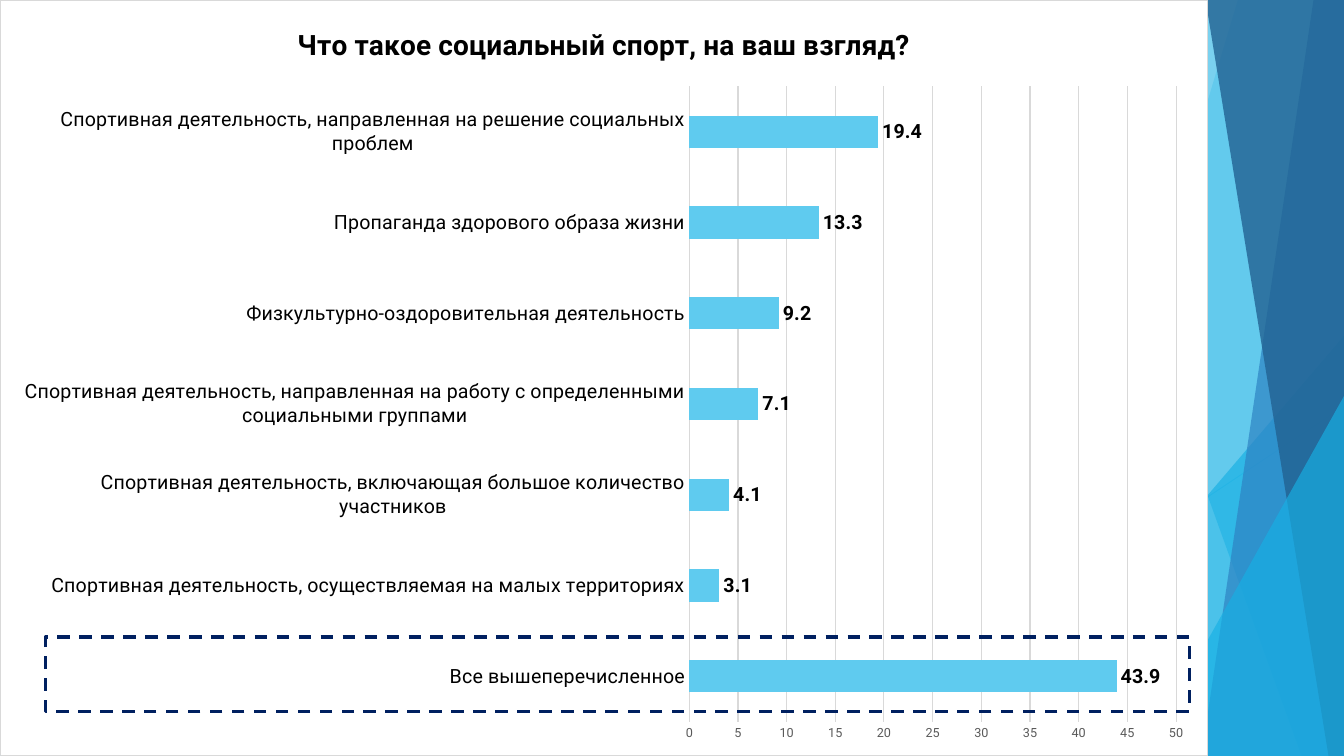
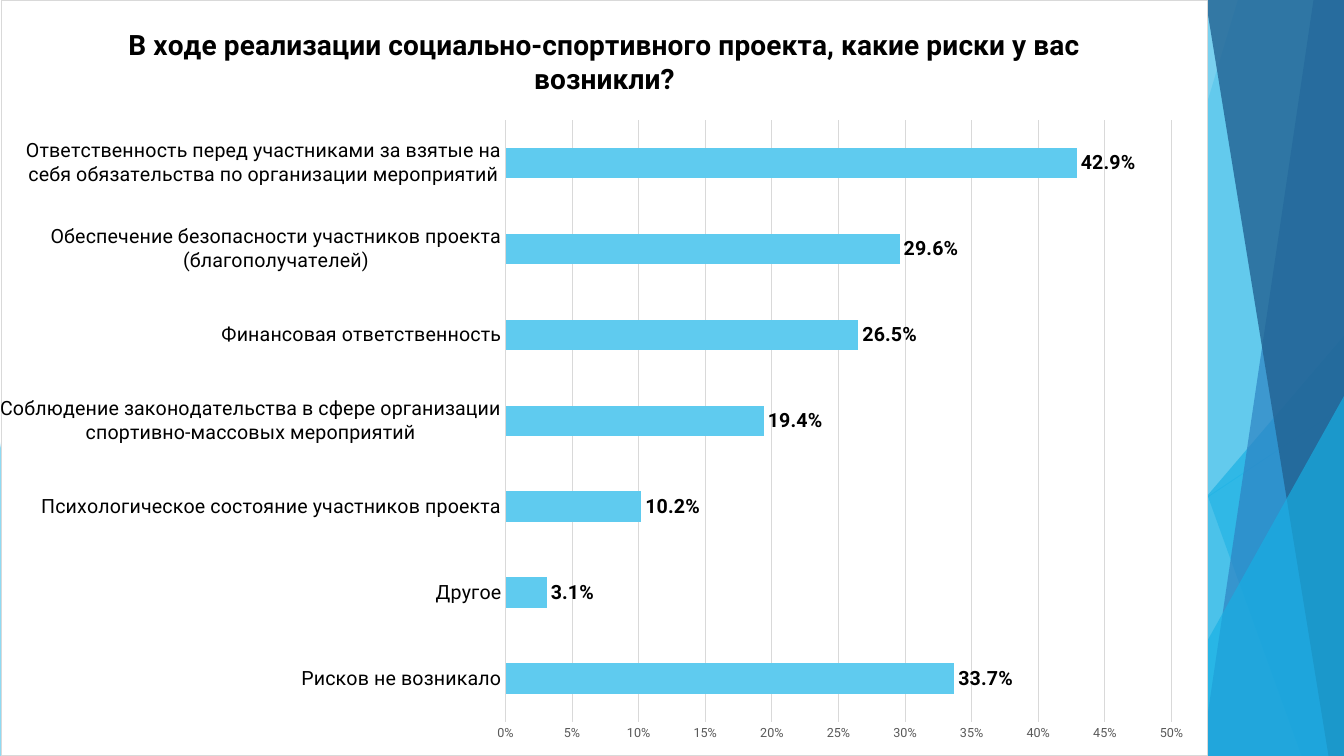
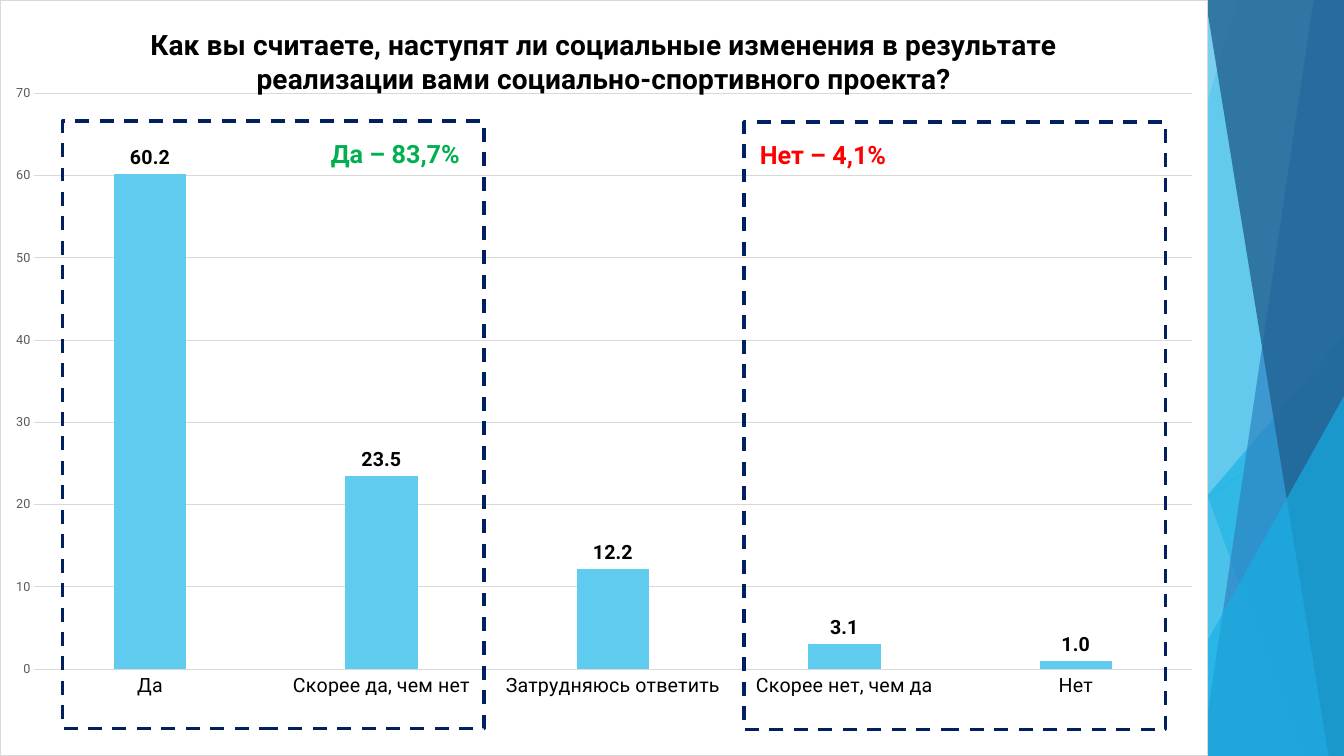
from lxml import etree
from pptx import Presentation
from pptx import util as u
from pptx.chart import data
from pptx.dml import color
from pptx.enum import chart as charts, dml, shapes, text
from pptx.oxml import ns, parse_xml

BLACK, GREY, RULE, WHITE = "000000", "595959", "D9D9D9", "FFFFFF"
SKY, CYAN, BLUE, DEEP, NAVY = "5FCBEF", "17B0E4", "2E83C3", "226292", "002060"
GREEN, RED = "00B050", "FF0000"
BAR = charts.XL_CHART_TYPE.BAR_CLUSTERED
COLUMN = charts.XL_CHART_TYPE.COLUMN_CLUSTERED


def rgb(value):
    return color.RGBColor.from_string(value)


def style_font(font, size, ink=BLACK, bold=False):
    font.name = "Roboto"
    font.size = u.Pt(size)
    font.bold = bold
    font.color.rgb = rgb(ink)


def write(frame, wording, align=text.PP_ALIGN.LEFT, **font_format):
    paragraph = frame.paragraphs[0]
    paragraph.alignment = align
    run = paragraph.add_run()
    run.text = wording
    style_font(run.font, **font_format)


def style_line(line, ink, width):
    line.color.rgb = rgb(ink)
    line.width = u.Pt(width)


def set_opacity(shape, percent):
    for node in shape.element.iter(ns.qn("a:srgbClr")):
        etree.SubElement(node, ns.qn("a:alpha"), val=str(percent * 1000))


class Deck:
    def __init__(self):
        self.presentation = Presentation()
        self.presentation.slide_width = u.Inches(13.33)
        self.presentation.slide_height = u.Inches(7.5)
        self.slide = None

    def add_slide(self):
        self.slide = self.presentation.slides.add_slide(self.presentation.slide_layouts[6])

    def x(self, percent):
        return u.Emu(round(self.presentation.slide_width * percent / 100))

    def y(self, percent):
        return u.Emu(round(self.presentation.slide_height * percent / 100))

    def box(self, left, top, width, height):
        return self.x(left), self.y(top), self.x(width), self.y(height)

    def paint(self, shape, fill, opacity):
        shape.shadow.inherit = False
        shape.fill.solid()
        shape.fill.fore_color.rgb = rgb(fill)
        shape.line.fill.background()
        set_opacity(shape, opacity)

    def ray(self, group, start, end):
        connector = group.shapes.add_connector(
            shapes.MSO_CONNECTOR.STRAIGHT,
            self.x(start[0]), self.y(start[1]), self.x(end[0]), self.y(end[1]))
        style_line(connector.line, SKY, 0.75)
        set_opacity(connector, 70)
        etree.SubElement(connector.element.spPr, ns.qn("a:effectLst"))

    def facet(self, group, top_left, bottom_left, fill, opacity):
        builder = group.shapes.build_freeform(self.x(top_left), 0)
        builder.add_line_segments([
            (self.x(100), 0), (self.x(100), self.y(100)),
            (self.x(bottom_left), self.y(100))], close=True)
        self.paint(builder.convert_to_shape(), fill, opacity)

    def triangle(self, group, left, top, width, apex, fill, opacity):
        shape = group.shapes.add_shape(
            shapes.MSO_SHAPE.ISOSCELES_TRIANGLE, *self.box(left, top, width, 100 - top))
        shape.adjustments[0] = apex
        self.paint(shape, fill, opacity)

    def backdrop(self):
        group = self.slide.shapes.add_group_shape()
        self.ray(group, (76.88, 0), (86.85, 100))
        self.ray(group, (100, 53.73), (60.9, 100))
        self.facet(group, 92.1, 75.3, SKY, 36)
        self.facet(group, 78.75, 88.73, SKY, 20)
        self.triangle(group, 73.28, 44.4, 26.72, 1, CYAN, 66)
        self.facet(group, 76.58, 96.83, CYAN, 50)
        self.facet(group, 97.73, 89.4, BLUE, 70)
        self.facet(group, 89.7, 98.85, DEEP, 80)
        self.triangle(group, 85.05, 52.4, 14.95, 1, CYAN, 66)
        self.triangle(group, 0, 58.53, 3.68, 0, SKY, 70)
        self.presentation.slide_master.element.cSld.spTree.insert(2, group.element)

    def chart(self, kind, title, answers, axis_format="#,##0", label_format="###0.0",
              gap=182, overlap=0, area=None):
        chart_data = data.CategoryChartData()
        chart_data.categories = [answer for answer, share in answers]
        chart_data.add_series("Series 1", [share for answer, share in answers])
        chart = self.slide.shapes.add_chart(
            kind, *self.box(0, 0, 89.87, 100), chart_data).chart
        style_font(chart.font, 10)
        chart.has_legend = False
        chart.has_title = True
        write(chart.chart_title.text_frame, title, text.PP_ALIGN.CENTER, size=20, bold=True)
        self.style_plot(chart.plots[0], gap, overlap, label_format)
        self.style_axes(chart, axis_format)
        self.style_chart_area(chart, area)

    def style_plot(self, plot, gap, overlap, label_format):
        plot.vary_by_categories = False
        plot.gap_width = gap
        plot.overlap = overlap
        series = plot.series[0]
        series.format.fill.solid()
        series.format.fill.fore_color.rgb = rgb(SKY)
        series.invert_if_negative = False
        labels = series.data_labels
        labels.show_value = True
        labels.position = charts.XL_LABEL_POSITION.OUTSIDE_END
        labels.number_format = label_format
        labels.number_format_is_linked = False
        style_font(labels.font, 14, bold=True)

    def style_axes(self, chart, axis_format):
        categories, values = chart.category_axis, chart.value_axis
        for axis, size, ink in ((categories, 14, BLACK), (values, 9, GREY)):
            axis.major_tick_mark = axis.minor_tick_mark = charts.XL_TICK_MARK.NONE
            style_font(axis.tick_labels.font, size, ink)
        style_line(categories.format.line, RULE, 0.75)
        values.format.line.fill.background()
        values.has_major_gridlines = True
        style_line(values.major_gridlines.format.line, RULE, 0.75)
        values.tick_labels.number_format = axis_format
        values.tick_labels.number_format_is_linked = False

    def style_chart_area(self, chart, area):
        body = chart.element.find(ns.qn("c:chart"))
        body.addnext(parse_xml(
            f'<c:spPr {ns.nsdecls("c", "a")}>'
            f'<a:solidFill><a:srgbClr val="{WHITE}"/></a:solidFill>'
            f'<a:ln w="{u.Pt(0.75)}"><a:solidFill><a:srgbClr val="{RULE}"/></a:solidFill></a:ln>'
            '</c:spPr>'))
        if area:
            plot_area = body.find(ns.qn("c:plotArea"))
            for layout in plot_area.findall(ns.qn("c:layout")):
                plot_area.remove(layout)
            settings = [("layoutTarget", "inner"), ("xMode", "edge"), ("yMode", "edge")]
            settings += [(name, share / 100) for name, share in zip("xywh", area)]
            items = "".join(f'<c:{name} val="{value}"/>' for name, value in settings)
            plot_area.insert(0, parse_xml(
                f'<c:layout {ns.nsdecls("c")}><c:manualLayout>{items}</c:manualLayout></c:layout>'))

    def frame(self, left, top, width, height, weight=2.5):
        shape = self.slide.shapes.add_shape(
            shapes.MSO_SHAPE.RECTANGLE, *self.box(left, top, width, height))
        shape.shadow.inherit = False
        shape.fill.background()
        style_line(shape.line, NAVY, weight)
        shape.line.dash_style = dml.MSO_LINE.DASH

    def caption(self, left, top, wording, **text_format):
        frame = self.slide.shapes.add_textbox(*self.box(left, top, 14.4, 5.33)).text_frame
        frame.word_wrap = True
        frame.auto_size = text.MSO_AUTO_SIZE.SHAPE_TO_FIT_TEXT
        write(frame, wording, size=18, bold=True, **text_format)


def main():
    deck = Deck()

    deck.add_slide()
    deck.backdrop()
    deck.chart(BAR, "Что такое социальный спорт, на ваш взгляд?", [
        ("Все вышеперечисленное", 43.9),
        ("Спортивная деятельность, осуществляемая на малых территориях", 3.1),
        ("Спортивная деятельность, включающая большое количество участников", 4.1),
        ("Спортивная деятельность, направленная на работу с определенными "
         "социальными группами", 7.1),
        ("Физкультурно-оздоровительная деятельность", 9.2),
        ("Пропаганда здорового образа жизни", 13.3),
        ("Спортивная деятельность, направленная на решение социальных проблем", 19.4),
    ])
    deck.frame(3.38, 84.27, 85.13, 9.87, weight=2.25)

    deck.add_slide()
    deck.chart(BAR, "В ходе реализации социально-спортивного проекта, "
               "какие риски у вас возникли?", [
        ("Рисков не возникало", 0.337),
        ("Другое", 0.031),
        ("Психологическое состояние участников проекта", 0.102),
        ("Соблюдение законодательства в сфере организации "
         "спортивно-массовых мероприятий", 0.194),
        ("Финансовая ответственность", 0.265),
        ("Обеспечение безопасности участников проекта (благополучателей)", 0.296),
        ("Ответственность перед участниками за взятые на себя обязательства "
         "по организации мероприятий", 0.429),
    ], axis_format="0%", label_format="###0.0%")

    deck.add_slide()
    deck.chart(COLUMN, "Как вы считаете, наступят ли социальные изменения в результате "
               "реализации вами социально-спортивного проекта?", [
        ("Да", 60.2),
        ("Скорее да, чем нет", 23.5),
        ("Затрудняюсь ответить", 12.2),
        ("Скорее нет, чем да", 3.1),
        ("Нет", 1),
    ], gap=219, overlap=-27, area=(2.8, 12.3, 95.9, 76.3))
    for left, top in ((4.65, 16), (55.35, 16.13)):
        deck.frame(left, top, 31.35, 80.4)
    deck.caption(20.55, 17.6, "Да – 83,7%", ink=GREEN, align=text.PP_ALIGN.RIGHT)
    deck.caption(55.8, 17.73, "Нет – 4,1%", ink=RED)

    deck.presentation.save("out.pptx")


if __name__ == "__main__":
    main()
